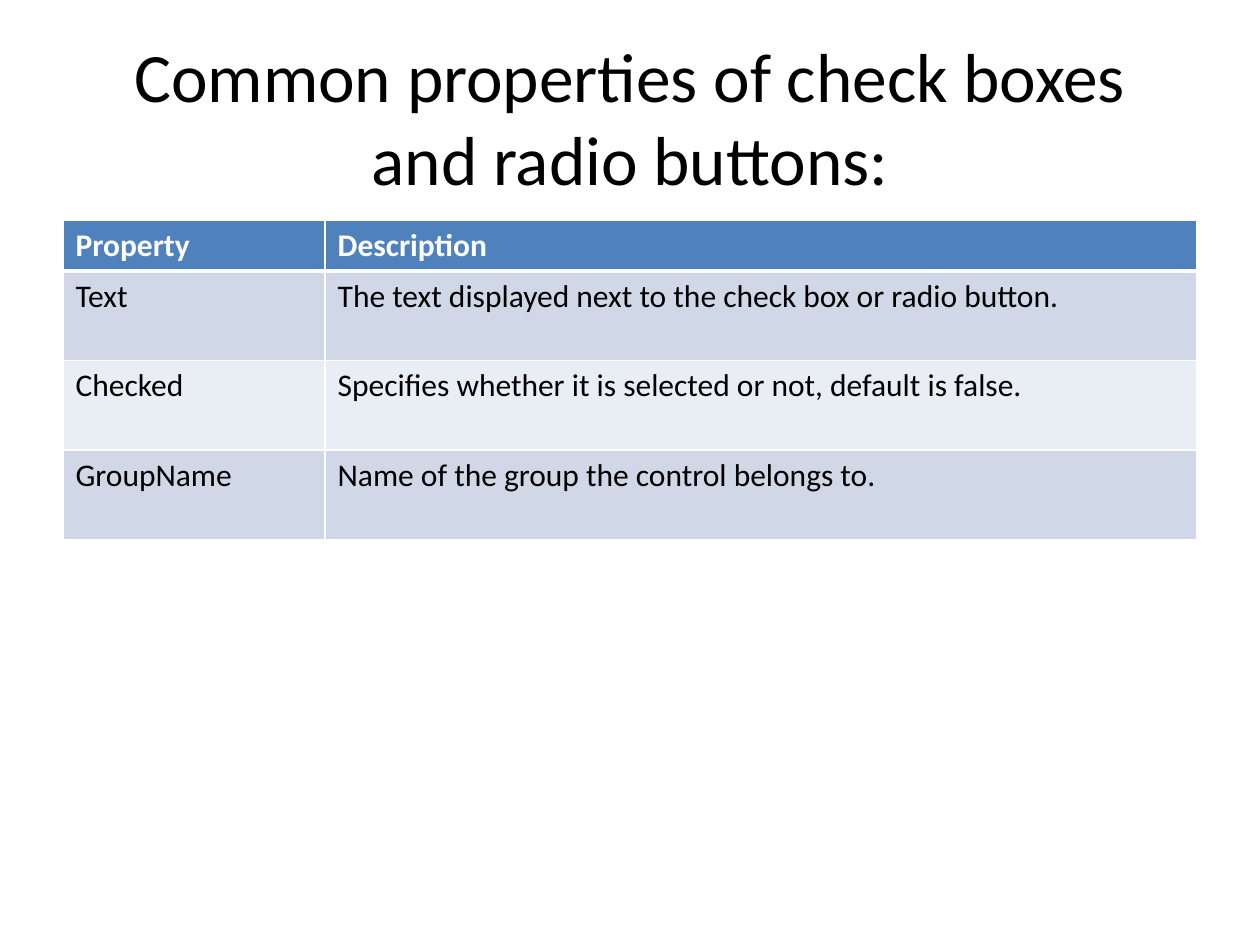
"""Build a slide that lists the common properties of check boxes and radio buttons."""
from dataclasses import dataclass

from lxml import etree
from pptx import Presentation
from pptx.dml.color import RGBColor
from pptx.enum.text import MSO_ANCHOR, PP_ALIGN
from pptx.oxml.ns import qn
from pptx.util import Inches, Pt

CENTER = PP_ALIGN.CENTER
MIDDLE = MSO_ANCHOR.MIDDLE


@dataclass(frozen=True)
class Theme:
    font: str = "Calibri"
    title_size: float = 39.6
    table_size: float = 18
    ink: str = "000000"
    white: str = "FFFFFF"
    header: str = "4F81BD"
    bands: tuple = ("D0D8E8", "E9EDF4")


THEME = Theme()
TITLE = "Common properties of check boxes and radio buttons:"
ROWS = [
    ("Property", "Description"),
    ("Text", "The text displayed next to the check box or radio button."),
    ("Checked", "Specifies whether it is selected or not, default is false."),
    ("GroupName", "Name of the group the control belongs to."),
]
COLUMN_WIDTHS = (2.08, 6.92)
HEADER_HEIGHT = 0.4
BODY_HEIGHT = 0.71


def style_text(text_frame, size, color, bold=False):
    """Apply the theme font, a size and a colour to every run."""
    for para in text_frame.paragraphs:
        for span in para.runs:
            span.font.name = THEME.font
            span.font.size = Pt(size)
            span.font.bold = bold
            span.font.color.rgb = RGBColor.from_string(color)


def add_title(page):
    """Add the centred slide title."""
    box = page.shapes.add_textbox(Inches(0.5), Inches(0.3), Inches(9), Inches(1.25))
    frame = box.text_frame
    frame.word_wrap = True
    frame.margin_left = frame.margin_right = Inches(0.15)
    frame.vertical_anchor = MIDDLE
    frame.text = TITLE
    frame.paragraphs[0].alignment = CENTER
    style_text(frame, THEME.title_size, THEME.ink)


def set_borders(cell, bottom):
    """Draw white cell borders with the given bottom width in points."""
    properties = cell._tc.get_or_add_tcPr()
    widths = {"a:lnL": 1, "a:lnR": 1, "a:lnT": 1, "a:lnB": bottom}
    for index, (tag, width) in enumerate(widths.items()):
        line = etree.Element(qn(tag), w=str(Pt(width)))
        fill = etree.SubElement(line, qn("a:solidFill"))
        etree.SubElement(fill, qn("a:srgbClr"), val=THEME.white)
        properties.insert(index, line)


def fill_cell(cell, text, row):
    """Write one cell and style it as header or banded body."""
    is_header = row == 0
    color = THEME.header if is_header else THEME.bands[(row - 1) % 2]
    cell.text = text
    cell.fill.solid()
    cell.fill.fore_color.rgb = RGBColor.from_string(color)
    style_text(cell.text_frame, THEME.table_size,
               THEME.white if is_header else THEME.ink, bold=is_header)
    set_borders(cell, bottom=3 if is_header else 1)


def add_property_table(page):
    """Add the table of properties and descriptions."""
    heights = [HEADER_HEIGHT] + [BODY_HEIGHT] * (len(ROWS) - 1)
    table = page.shapes.add_table(
        len(ROWS), len(COLUMN_WIDTHS), Inches(0.5), Inches(1.75),
        Inches(sum(COLUMN_WIDTHS)), Inches(sum(heights))).table
    for column, width in zip(table.columns, COLUMN_WIDTHS):
        column.width = Inches(width)
    for row, (height, texts) in enumerate(zip(heights, ROWS)):
        table.rows[row].height = Inches(height)
        for column, text in enumerate(texts):
            fill_cell(table.cell(row, column), text, row)


def main():
    """Build and save the deck."""
    deck = Presentation()
    deck.slide_width, deck.slide_height = Inches(10), Inches(7.5)
    page = deck.slides.add_slide(deck.slide_layouts[6])
    add_title(page)
    add_property_table(page)
    deck.save("out.pptx")


if __name__ == "__main__":
    main()
